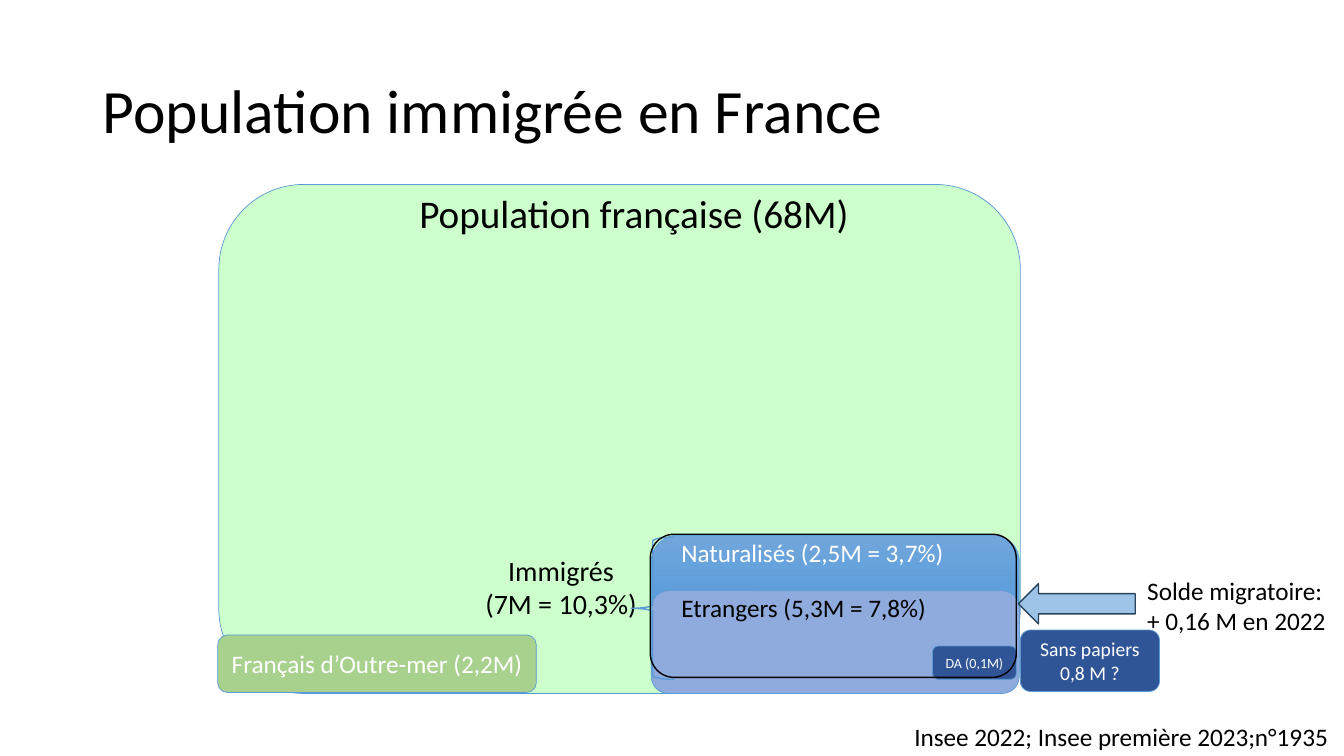
from collections import namedtuple
from copy import deepcopy

from pptx import Presentation
from pptx.dml.color import RGBColor
from pptx.enum.shapes import MSO_SHAPE
from pptx.enum.text import MSO_ANCHOR, MSO_AUTO_SIZE, PP_ALIGN
from pptx.oxml.ns import qn
from pptx.util import Pt

PX = 9144  # EMU, 100 px to the inch
FONT = "Calibri"
BLACK = RGBColor(0x00, 0x00, 0x00)
WHITE = RGBColor(0xFF, 0xFF, 0xFF)
PALE_GREEN = RGBColor(0xCC, 0xFF, 0xCC)
OLIVE_GREEN = RGBColor(0xA9, 0xD1, 0x8E)
LINE_BLUE = RGBColor(0x5B, 0x9B, 0xD5)
SOFT_BLUE = RGBColor(0x8F, 0xAA, 0xDC)
DEEP_BLUE = RGBColor(0x2F, 0x55, 0x97)
ARROW_BLUE = RGBColor(0x9D, 0xC3, 0xE6)
ARROW_EDGE = RGBColor(0x28, 0x44, 0x5D)
GRADIENT = [
    (0, RGBColor(0x71, 0xA6, 0xDB)),
    (0.5, RGBColor(0x55, 0x9B, 0xDB)),
    (1, RGBColor(0x44, 0x8A, 0xCA)),
]

Box = namedtuple("Box", "left top width height")


def within(box, left, top, width, height):
    """Return a box whose left and top count from the corner of another."""
    return Box(box.left + left, box.top + top, width, height)


def emu(box):
    return [length * PX for length in box]


def write(frame, text, size=18, color=BLACK, align=PP_ALIGN.LEFT, spacing=None):
    """Fill a text frame with one paragraph for each line of text."""
    for index, line in enumerate(text.split("\n")):
        para = frame.add_paragraph() if index else frame.paragraphs[0]
        para.alignment = align
        para.line_spacing = spacing
        span = para.add_run()
        span.text = line
        span.font.name = FONT
        span.font.size = Pt(size)
        span.font.color.rgb = color


def add_label(slide, box, text, wrap=False, **text_format):
    frame = slide.shapes.add_textbox(*emu(box)).text_frame
    frame.word_wrap = wrap
    frame.auto_size = MSO_AUTO_SIZE.SHAPE_TO_FIT_TEXT
    write(frame, text, **text_format)


def add_block(slide, box, fill=None, kind=MSO_SHAPE.ROUNDED_RECTANGLE,
              line=LINE_BLUE, weight=0.5, text=None, size=18):
    shape = slide.shapes.add_shape(kind, *emu(box))
    shape.shadow.inherit = False
    if fill is None:
        shape.fill.background()
    else:
        shape.fill.solid()
        shape.fill.fore_color.rgb = fill
    shape.line.color.rgb = line
    shape.line.width = Pt(weight)
    if text:
        shape.text_frame.word_wrap = True
        shape.text_frame.vertical_anchor = MSO_ANCHOR.MIDDLE
        write(shape.text_frame, text, size=size, color=WHITE, align=PP_ALIGN.CENTER)
    return shape


def shade(shape):
    """Give a shape the three-stop gradient, from top to bottom."""
    fill = shape.fill
    fill.gradient()
    fill.gradient_angle = 270
    stop_list = shape.element.spPr.find(".//" + qn("a:gsLst"))
    stop_list.insert(1, deepcopy(stop_list[0]))
    for stop, (position, color) in zip(fill.gradient_stops, GRADIENT):
        stop.position = position
        stop.color.rgb = color


def add_title(slide, box, text):
    title = slide.shapes.title
    title.left, title.top, title.width, title.height = emu(box)
    title.text_frame.vertical_anchor = MSO_ANCHOR.MIDDLE
    write(title.text_frame, text, size=44, spacing=0.9)


def add_population(slide, box):
    add_block(slide, box, PALE_GREEN)
    add_label(slide, within(box, 189, 0, 451, 57), "Population française (68M)", size=28)
    add_block(slide, within(box, -1, 447, 316, 57), OLIVE_GREEN,
              text="Français d’Outre-mer (2,2M)")


def add_immigrants(slide, box):
    shade(add_block(slide, box))
    add_label(slide, within(box, -210, 13, 241, 77), "Immigrés\n(7M = 10,3%)",
              wrap=True, size=20, align=PP_ALIGN.CENTER)
    add_block(slide, within(box, 0, 55, box.width, 102), SOFT_BLUE)
    add_label(slide, within(box, 20, 52, 310, 40), "Etrangers (5,3M = 7,8%)", wrap=True)
    add_label(slide, within(box, 20, -3, 283, 40), "Naturalisés (2,5M = 3,7%)", color=WHITE)
    add_block(slide, within(box, -20, 2, 43, 141), kind=MSO_SHAPE.LEFT_BRACE, weight=1)
    add_block(slide, within(box, 279, 110, 83, 33), DEEP_BLUE, text="DA (0,1M)", size=10)
    add_block(slide, within(box, -1, -1, 363, 142), line=BLACK, weight=1)


def add_migration(slide, box):
    add_block(slide, within(box, 2, 59, 138, 61), DEEP_BLUE,
              text="Sans papiers\n0,8 M ?", size=14)
    add_label(slide, within(box, 118, 0, 198, 71), "Solde migratoire:\n+ 0,16 M en 2022")
    add_block(slide, within(box, 0, 13, 116, 40), ARROW_BLUE,
              kind=MSO_SHAPE.LEFT_ARROW, line=ARROW_EDGE, weight=1)


def main():
    deck = Presentation()
    deck.slide_width, deck.slide_height = 1333 * PX, 750 * PX
    slide = deck.slides.add_slide(deck.slide_layouts[5])
    add_title(slide, Box(92, 40, 1150, 145), "Population immigrée en France")
    add_population(slide, Box(217, 183, 795, 505))
    add_immigrants(slide, Box(646, 531, 365, 157))
    add_migration(slide, Box(1010, 566, 316, 120))
    add_label(slide, Box(897, 711, 436, 40), "Insee 2022; Insee première 2023;n°1935")
    deck.save("out.pptx")


if __name__ == "__main__":
    main()
